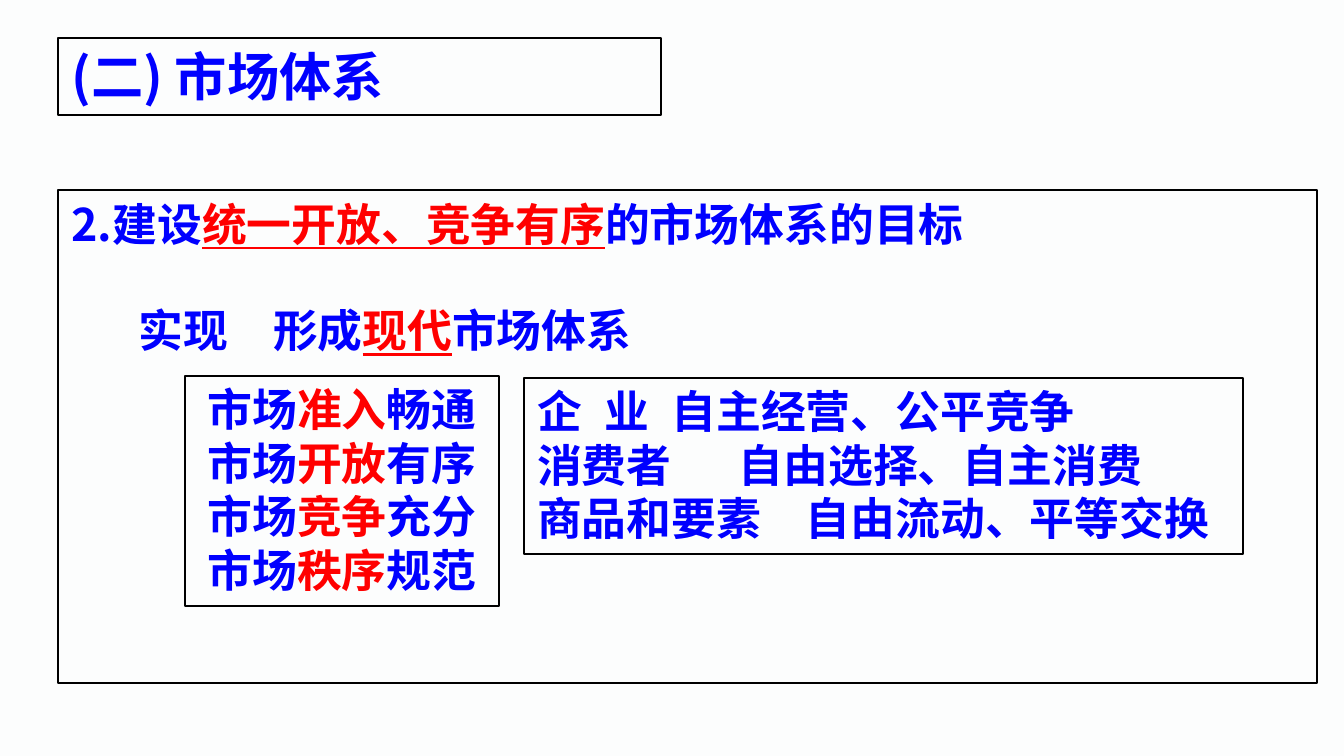
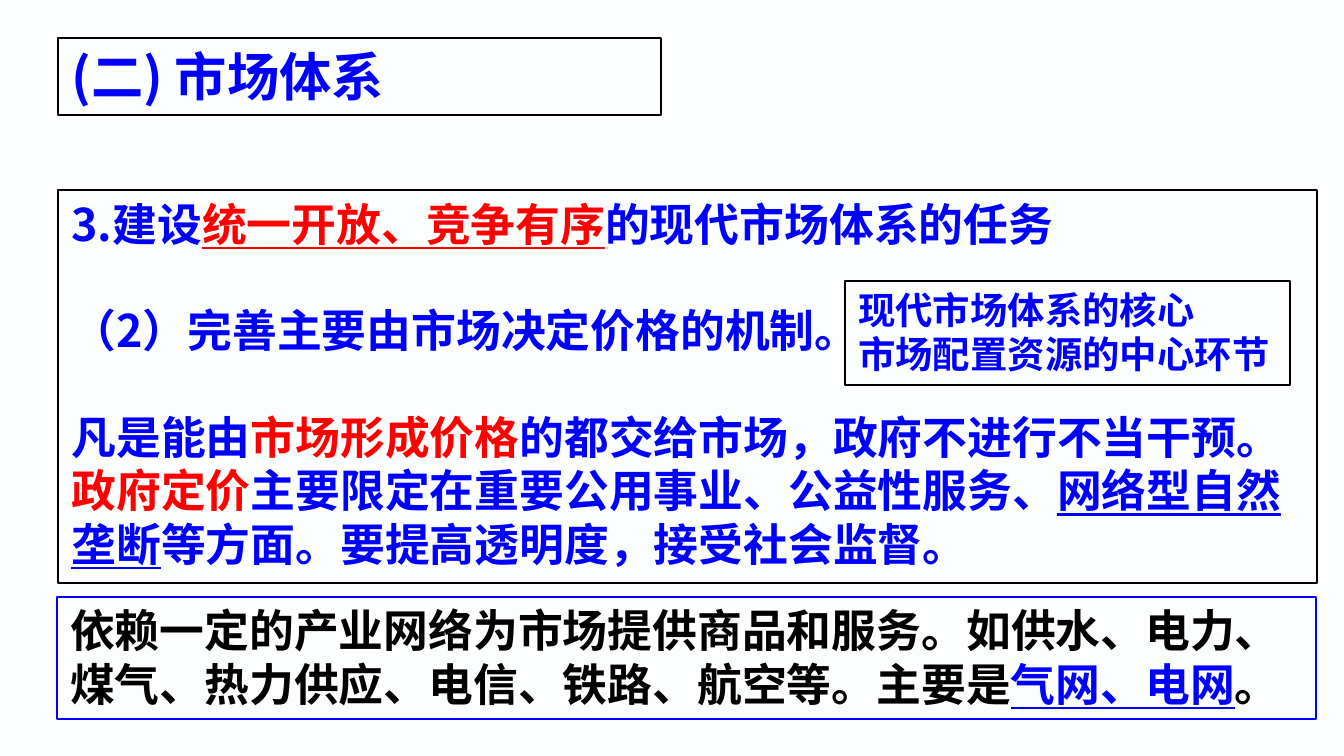
import pptx
import pptx.util
import pptx.dml.color
import pptx.enum.shapes
import pptx.enum.text
import pptx.oxml.ns
import lxml.etree

PX = 914400 / 134.4  # EMU in one px
FONT = "Noto Sans CJK SC"
LEADING = 1.19  # line height as a share of the text size
COLORS = {"paper": "FCFDFD", "blue": "0000FF", "red": "FF0000", "black": "000000"}
ALIGN = pptx.enum.text.PP_ALIGN


def px(n):
    return pptx.util.Emu(round(n * PX))


def rgb(name):
    return pptx.dml.color.RGBColor.from_string(COLORS[name])


def add_xml(parent, tag, **attrs):
    return lxml.etree.SubElement(parent, pptx.oxml.ns.qn(tag), attrs)


class Deck:
    """Style of the lesson and the slide being built."""

    def __init__(self):
        self.prs = pptx.Presentation()
        self.prs.slide_width, self.prs.slide_height = px(1344), px(756)
        fill = self.prs.slide_master.background.fill
        fill.solid()
        fill.fore_color.rgb = rgb("paper")
        self.s = None

    def slide(self, title):
        self.s = self.prs.slides.add_slide(self.prs.slide_layouts[1])
        self.frame(self.s.shapes.title, (58, 38, 603, 77))
        self.text(self.s.shapes.title, [[title]], size=28)

    def body(self, height, paragraphs, **style):
        sp = self.s.placeholders[1]
        self.frame(sp, (58, 190, 1259, height))
        self.text(sp, paragraphs, **style)

    def box(self, at, paragraphs, line="black", **style):
        sp = self.s.shapes.add_shape(pptx.enum.shapes.MSO_SHAPE.RECTANGLE, *map(px, at))
        sp.shadow.inherit = False
        self.frame(sp, at, line)
        self.text(sp, paragraphs, **style)

    def frame(self, sp, at, line="black"):
        sp.left, sp.top, sp.width, sp.height = map(px, at)
        sp.fill.background()
        sp.line.color.rgb = rgb(line)
        sp.line.width = pptx.util.Pt(0.75)

    def text(self, sp, paragraphs, size=24, color="blue", align=ALIGN.LEFT, tabs=None, gaps=()):
        """Paragraphs are lists of runs: plain text, or (text, colour, underline).

        tabs maps a paragraph's index to its tab stops; gaps lists the
        paragraphs that have one line of space before them.
        """
        tf = sp.text_frame
        tf.word_wrap = True
        tf.auto_size = pptx.enum.text.MSO_AUTO_SIZE.NONE
        tf.vertical_anchor = pptx.enum.text.MSO_ANCHOR.TOP
        leading = pptx.util.Pt(size * LEADING)
        for i, runs in enumerate(paragraphs):
            p = tf.paragraphs[0] if i == 0 else tf.add_paragraph()
            p.alignment = align
            p.line_spacing = leading
            p.space_before = leading if i in gaps else pptx.util.Pt(0)
            pPr = p._p.get_or_add_pPr()
            pPr.set("marL", "0")
            pPr.set("indent", "0")
            add_xml(pPr, "a:buNone")
            if tabs and i in tabs:
                stops = add_xml(pPr, "a:tabLst")
                for stop in tabs[i]:
                    add_xml(stops, "a:tab", pos=str(px(stop)), algn="l")
            for run in runs:
                self.run(p, size, *((run, color) if isinstance(run, str) else run))

    def run(self, p, size, text, color, underline=False):
        r = p.add_run()
        r.text = text
        r.font.size = pptx.util.Pt(size)
        r.font.bold = True
        r.font.underline = underline
        r.font.color.rgb = rgb(color)
        r.font.name = FONT
        add_xml(r._r.get_or_add_rPr(), "a:ea", typeface=FONT)


def main():
    deck = Deck()
    title = "(二) 市场体系"
    key_phrase = ("统一开放、竞争有序", "red", True)

    # Slide 1: goals of the market system
    deck.slide(title)
    deck.body(493, [
        ["2.建设", key_phrase, "的市场体系的目标"],
        ["\t实现\t形成", ("现代", "red", True), "市场体系"],
    ], tabs={1: (174, 506)}, gaps=(1,))
    deck.box((524, 378, 719, 176), [
        ["企\t业\t自主经营、公平竞争"],
        ["消费者\t自由选择、自主消费"],
        ["商品和要素\t自由流动、平等交换"],
    ], tabs={0: (65, 213), 1: (227,), 2: (245,)})
    goals = [("准入", "畅通"), ("开放", "有序"), ("竞争", "充分"), ("秩序", "规范")]
    deck.box((185, 376, 314, 230),
             [["市场", (aspect, "red"), state] for aspect, state in goals],
             align=ALIGN.CENTER)

    # Slide 2: tasks of the market system
    deck.slide(title)
    deck.body(393, [
        ["3.建设", key_phrase, "的现代市场体系的任务"],
        ["（2）完善主要由市场决定价格的机制。"],
        ["凡是能由", ("市场形成价格", "red"), "的都交给市场，政府不进行不当干预。"],
        [("政府定价", "red"), "主要限定在重要公用事业、公益性服务、",
         ("网络型自然垄断", "blue", True), "等方面。要提高透明度，接受社会监督。"],
    ], gaps=(1, 2))
    deck.box((845, 281, 445, 104),
             [["现代市场体系的核心"], ["市场配置资源的中心环节"]], size=20)
    deck.box((57, 597, 1259, 122), [
        ["依赖一定的产业网络为市场提供商品和服务。如供水、电力、煤气、"
         "热力供应、电信、铁路、航空等。主要是",
         ("气网、电网", "blue", True), "。"],
    ], line="blue", color="black")

    deck.prs.save("out.pptx")


if __name__ == "__main__":
    main()
